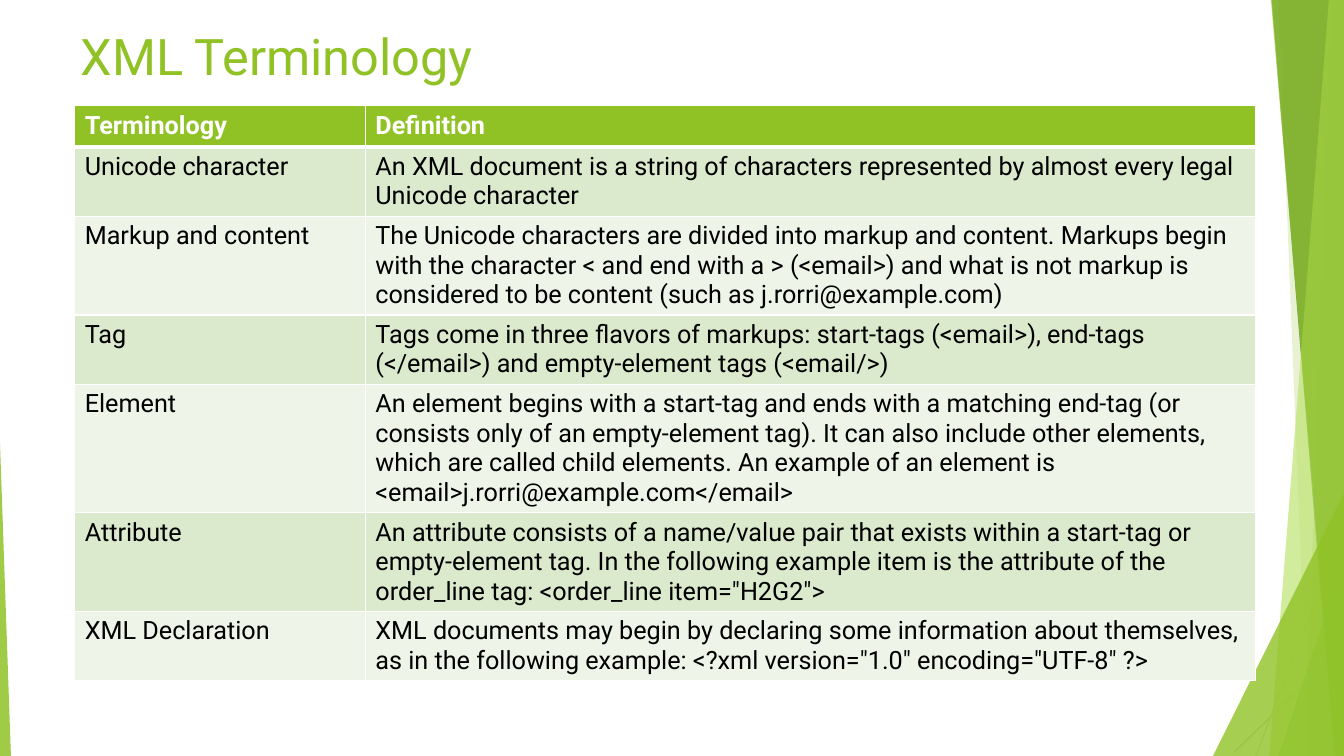
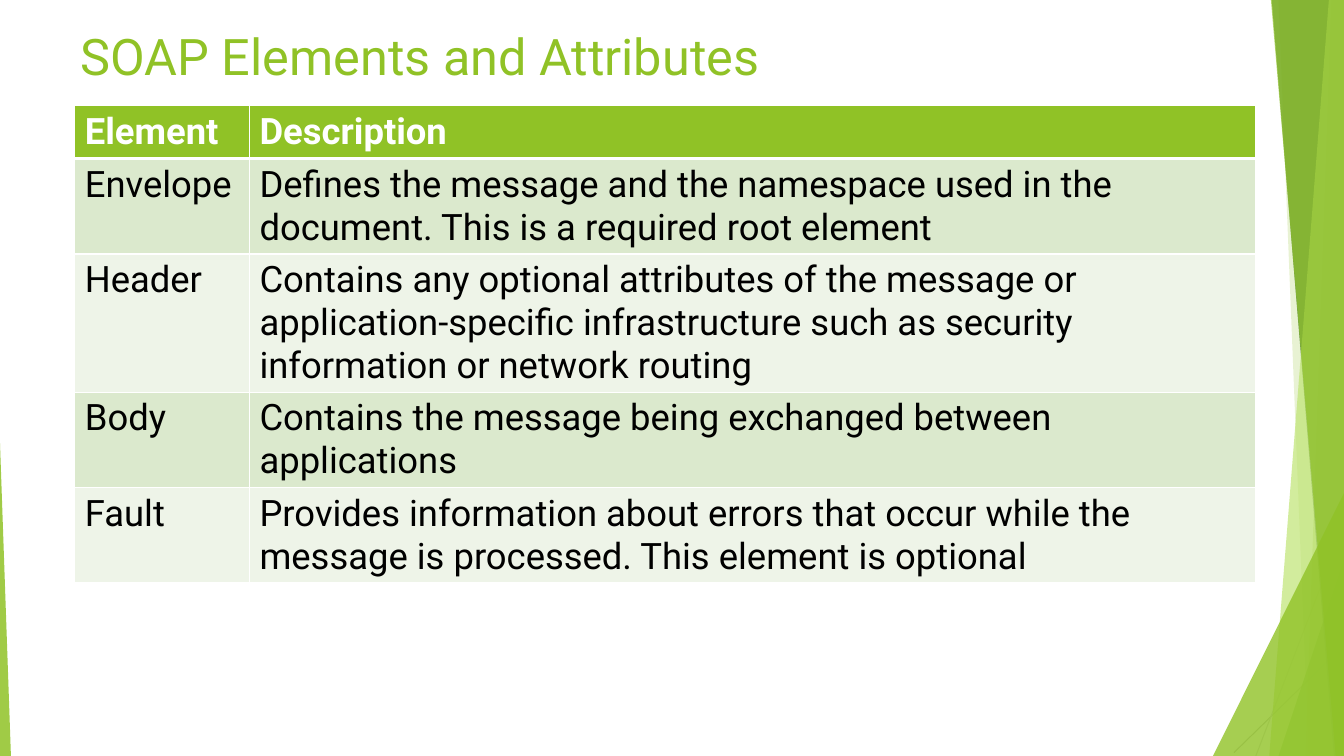
import dataclasses

import pptx
import pptx.dml.color
import pptx.enum.shapes
import pptx.enum.text
import pptx.oxml.ns
import pptx.oxml.xmlchemy
import pptx.util

qn = pptx.oxml.ns.qn
new_element = pptx.oxml.xmlchemy.OxmlElement
COLUMNS, ROWS = 160, 90  # grid that covers the slide


@dataclasses.dataclass(frozen=True)
class Theme:
    font: str = "Roboto"
    title_size: int = 36
    green: str = "90C226"
    mid_green: str = "54A021"
    dark_green: str = "3F7819"
    lime: str = "C0E474"
    white: str = "FFFFFF"
    black: str = "000000"
    stripes: tuple = ("DBE9CD", "EEF4E8")
    line_grey: str = "BFBFBF"
    light_grey: str = "D9D9D9"
    hairline: float = 0.75
    border: int = 1
    header_border: int = 3


def rgb(color):
    return pptx.dml.color.RGBColor.from_string(color)


class SlideBuilder:
    """Holds the deck, its style and the slide being built."""

    def __init__(self, theme):
        self.theme = theme
        self.deck = pptx.Presentation()
        self.deck.slide_width = pptx.util.Inches(13.33)
        self.deck.slide_height = pptx.util.Inches(7.5)
        self.layout = self.deck.slide_layouts[5]
        self.page = None

    def x(self, columns):
        return round(columns * self.deck.slide_width / COLUMNS)

    def y(self, rows):
        return round(rows * self.deck.slide_height / ROWS)

    def box(self, left, top, width, height):
        return self.x(left), self.y(top), self.x(width), self.y(height)

    def style_text(self, frame, size, color, bold=False):
        for para in frame.paragraphs:
            para.alignment = pptx.enum.text.PP_ALIGN.LEFT
            for span in para.runs:
                span.font.name = self.theme.font
                span.font.size = pptx.util.Pt(size)
                span.font.color.rgb = rgb(color)
                span.font.bold = bold

    def add_page(self, title):
        self.page = self.deck.slides.add_slide(self.layout)
        holder = self.page.shapes.title
        holder.left, holder.top, holder.width, holder.height = self.box(8.4, 2.2, 141.1, 8.8)
        frame = holder.text_frame
        frame.text = title
        frame.word_wrap = True
        frame.auto_size = pptx.enum.text.MSO_AUTO_SIZE.NONE
        frame.vertical_anchor = pptx.enum.text.MSO_ANCHOR.MIDDLE
        self.style_text(frame, self.theme.title_size, self.theme.green)

    # Background facets
    def paint(self, shape, color, opacity):
        shape.shadow.inherit = False
        shape.line.fill.background()
        shape.fill.solid()
        shape.fill.fore_color.rgb = rgb(color)
        fill_color = next(shape.element.spPr.iter(qn("a:srgbClr")))
        alpha = new_element("a:alpha")
        alpha.set("val", str(opacity * 1000))
        fill_color.append(alpha)

    def band(self, top_edge, bottom_edge, color, opacity):
        """Full-height facet from a slanted left edge to the slide's right side."""
        outline = self.page.shapes.build_freeform(self.x(top_edge), 0)
        outline.add_line_segments([
            (self.x(COLUMNS), 0),
            (self.x(COLUMNS), self.y(ROWS)),
            (self.x(bottom_edge), self.y(ROWS)),
        ], close=True)
        self.paint(outline.convert_to_shape(), color, opacity)

    def corner(self, left, top, width, apex, color, opacity):
        """Right triangle that stands on the slide's lower edge."""
        shape = self.page.shapes.add_shape(
            pptx.enum.shapes.MSO_SHAPE.ISOSCELES_TRIANGLE,
            *self.box(left, top, width, ROWS - top))
        shape.adjustments[0] = apex
        self.paint(shape, color, opacity)

    def line(self, start, end, color):
        connector = self.page.shapes.add_connector(
            pptx.enum.shapes.MSO_CONNECTOR.STRAIGHT,
            self.x(start[0]), self.y(start[1]), self.x(end[0]), self.y(end[1]))
        connector.line.color.rgb = rgb(color)
        connector.line.width = pptx.util.Pt(self.theme.hairline)
        connector.element.spPr.append(new_element("a:effectLst"))

    def add_facets(self):
        """Draw the facets once and move them to the layout all pages share."""
        theme = self.theme
        for holder in list(self.layout.placeholders):
            if holder.placeholder_format.idx != 0:
                self.layout.shapes.element.remove(holder.element)
        self.line((159.6, 77.2), (146.9, 89.6), theme.line_grey)
        self.line((157.7, 68.6), (149.5, 90), theme.light_grey)
        self.band(158.5, 155.4, theme.green, 30)
        self.band(152.2, 155.8, theme.green, 20)
        self.corner(152.2, 66.5, 7.8, 1, theme.mid_green, 72)
        self.band(151.4, 158.8, theme.dark_green, 70)
        self.band(158.2, 151.1, theme.lime, 70)
        self.band(151.3, 159, theme.green, 65)
        self.corner(144.4, 58.7, 15.6, 1, theme.green, 80)
        self.corner(0, 52.8, 1.3, 0, theme.green, 85)
        for shape in list(self.page.shapes):
            if not shape.is_placeholder:
                self.layout.shapes.element.append(shape.element)

    # Tables
    def set_borders(self, cell, top, bottom):
        properties = cell._tc.get_or_add_tcPr()
        widths = {"a:lnL": self.theme.border, "a:lnR": self.theme.border,
                  "a:lnT": top, "a:lnB": bottom}
        for position, (tag, width) in enumerate(widths.items()):
            edge = new_element(tag)
            edge.set("w", str(int(pptx.util.Pt(width))))
            fill = new_element("a:solidFill")
            color = new_element("a:srgbClr")
            color.set("val", self.theme.white)
            fill.append(color)
            edge.append(fill)
            properties.insert(position, edge)

    def add_table(self, rows, first_width, size, height):
        theme = self.theme
        total_width = 140.6
        frame = self.page.shapes.add_table(
            len(rows), 2, *self.box(8.9, 12.6, total_width, height))
        table = frame.table
        table.horz_banding = False
        for column, width in zip(table.columns, (first_width, total_width - first_width)):
            column.width = self.x(width)
        for row_index, texts in enumerate(rows):
            # Rows start at this least height and grow with their text
            table.rows[row_index].height = self.y(4.9)
            header = row_index == 0
            background = theme.green if header else theme.stripes[(row_index - 1) % 2]
            top = theme.header_border if row_index == 1 else theme.border
            bottom = theme.header_border if header else theme.border
            for column_index, text in enumerate(texts):
                cell = table.cell(row_index, column_index)
                cell.text_frame.text = text
                cell.fill.solid()
                cell.fill.fore_color.rgb = rgb(background)
                self.style_text(cell.text_frame, size,
                                theme.white if header else theme.black, header)
                self.set_borders(cell, top, bottom)
        frame.height = self.y(height)


TERMS = [
    ("Terminology", "Definition"),
    ("Unicode character",
     "An XML document is a string of characters represented by almost every legal "
     "Unicode character"),
    ("Markup and content",
     "The Unicode characters are divided into markup and content. Markups begin with "
     "the character < and end with a > (<email>) and what is not markup is considered "
     "to be content (such as j.rorri@example.com)"),
    ("Tag",
     "Tags come in three flavors of markups: start-tags (<email>), end-tags (</email>) "
     "and empty-element tags (<email/>)"),
    ("Element",
     "An element begins with a start-tag and ends with a matching end-tag (or consists "
     "only of an empty-element tag). It can also include other elements, which are "
     "called child elements. An example of an element is "
     "<email>j.rorri@example.com</email>"),
    ("Attribute",
     "An attribute consists of a name/value pair that exists within a start-tag or "
     "empty-element tag. In the following example item is the attribute of the "
     'order_line tag: <order_line item="H2G2">'),
    ("XML Declaration",
     "XML documents may begin by declaring some information about themselves, as in "
     'the following example: <?xml version="1.0" encoding="UTF-8" ?>'),
]

SOAP_PARTS = [
    ("Element", "Description"),
    ("Envelope",
     "Defines the message and the namespace used in the document. This is a required "
     "root element"),
    ("Header",
     "Contains any optional attributes of the message or application-specific "
     "infrastructure such as security information or network routing"),
    ("Body", "Contains the message being exchanged between applications"),
    ("Fault",
     "Provides information about errors that occur while the message is processed. "
     "This element is optional"),
]


def main():
    builder = SlideBuilder(Theme())

    # XML terms
    builder.add_page("XML Terminology")
    builder.add_facets()
    builder.add_table(TERMS, first_width=34.6, size=18, height=69.7)

    # SOAP elements
    builder.add_page("SOAP Elements and Attributes")
    builder.add_table(SOAP_PARTS, first_width=20.8, size=26, height=66.7)

    builder.deck.save("out.pptx")


if __name__ == "__main__":
    main()
